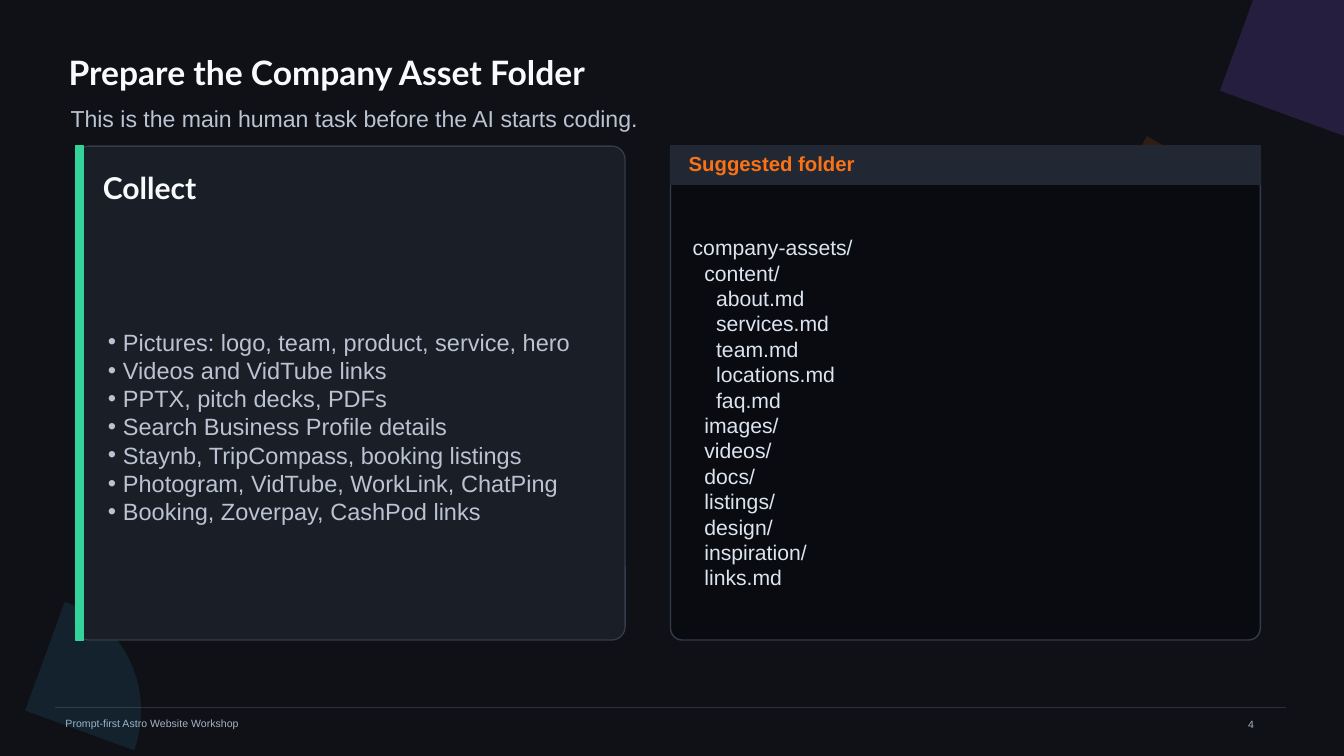
from lxml import etree
from pptx import Presentation
from pptx.dml.color import RGBColor
from pptx.enum.shapes import MSO_CONNECTOR, MSO_SHAPE
from pptx.enum.text import MSO_ANCHOR
from pptx.oxml.ns import qn
from pptx.util import Emu, Pt

ARC, RECT, ROUNDED = MSO_SHAPE.ARC, MSO_SHAPE.RECTANGLE, MSO_SHAPE.ROUNDED_RECTANGLE
STRAIGHT = MSO_CONNECTOR.STRAIGHT
TOP, MIDDLE = MSO_ANCHOR.TOP, MSO_ANCHOR.MIDDLE

WHITE, SOFT, MUTED = "F8FAFC", "BAC3D2", "AAB3C1"
ORANGE, GREEN, BORDER = "F97316", "34D399", "343B4A"

COLLECT = [
    "Pictures: logo, team, product, service, hero",
    "Videos and VidTube links",
    "PPTX, pitch decks, PDFs",
    "Search Business Profile details",
    "Staynb, TripCompass, booking listings",
    "Photogram, VidTube, WorkLink, ChatPing",
    "Booking, Zoverpay, CashPod links",
]
FOLDER_TREE = [
    "company-assets/",
    "  content/",
    "    about.md",
    "    services.md",
    "    team.md",
    "    locations.md",
    "    faq.md",
    "  images/",
    "  videos/",
    "  docs/",
    "  listings/",
    "  design/",
    "  inspiration/",
    "  links.md",
]


def px(n):
    """Turn px, 100 to the inch, into EMU."""
    return Emu(n * 9144)


def rgb(value):
    return RGBColor.from_string(value)


class Deck:
    """Holds the fonts and the slide being drawn."""

    heading, body = "Lato", "Arial"

    def __init__(self, width, height, background):
        self.prs = Presentation()
        self.prs.slide_width, self.prs.slide_height = px(width), px(height)
        self.slide = self.prs.slides.add_slide(self.prs.slide_layouts[6])
        fill = self.slide.background.fill
        fill.solid()
        fill.fore_color.rgb = rgb(background)

    def shape(self, kind, x, y, w, h, fill, line=None, weight=1):
        s = self.slide.shapes.add_shape(kind, px(x), px(y), px(w), px(h))
        s.shadow.inherit = False
        s.fill.solid()
        s.fill.fore_color.rgb = rgb(fill)
        if line:
            s.line.color.rgb = rgb(line)
            s.line.width = Pt(weight)
        else:
            s.line.fill.background()
        return s

    def wedge(self, x, y, size, rotation, fill, opacity):
        s = self.shape(ARC, x, y, size, size, fill)
        s.rotation = rotation
        color = s.fill._xPr.find(qn("a:solidFill"))[0]
        etree.SubElement(color, qn("a:alpha"), val=str(opacity * 1000))

    def panel(self, x, y, w, h, fill, radius, weight):
        s = self.shape(ROUNDED, x, y, w, h, fill, BORDER, weight)
        s.adjustments[0] = radius

    def rule(self, x1, x2, y, color, weight):
        s = self.slide.shapes.add_connector(STRAIGHT, px(x1), px(y), px(x2), px(y))
        s.line.color.rgb = rgb(color)
        s.line.width = Pt(weight)
        etree.SubElement(s._element.spPr, qn("a:effectLst"))

    def text(self, x, y, w, h, lines, size, color, font=body, bold=False,
             anchor=MIDDLE, inset=(0, 0), bullet_indent=0):
        s = self.slide.shapes.add_textbox(px(x), px(y), px(w), px(h))
        tf = s.text_frame
        tf.word_wrap = True
        tf.vertical_anchor = anchor
        tf.margin_left = tf.margin_right = px(inset[0])
        tf.margin_top = tf.margin_bottom = px(inset[1])
        for i, line in enumerate(lines):
            p = tf.paragraphs[0] if i == 0 else tf.add_paragraph()
            if bullet_indent:
                self.bullet(p, bullet_indent)
            r = p.add_run()
            r.text = line
            r.font.name = font
            r.font.size = Pt(size)
            r.font.bold = bold
            r.font.color.rgb = rgb(color)

    def bullet(self, p, indent):
        pPr = p._p.get_or_add_pPr()
        pPr.set("marL", str(px(indent)))
        pPr.set("indent", str(-px(indent)))
        etree.SubElement(pPr, qn("a:buFont"), typeface=self.body)
        etree.SubElement(pPr, qn("a:buChar"), char="•")


def main():
    deck = Deck(1333, 750, "0F1117")

    deck.rule(55, 1275, 702, "2B303B", 0.75)
    deck.text(65, 708, 550, 20, ["Prompt-first Astro Website Workshop"], 7.5, MUTED)
    deck.wedge(1020, -100, 380, 20, "8B5CF6", 18)
    deck.wedge(1120, 70, 260, 210, ORANGE, 14)
    deck.wedge(-90, 590, 230, 20, "38BDF8", 10)

    deck.text(68, 45, 1060, 52, ["Prepare the Company Asset Folder"], 24, WHITE,
              deck.heading, bold=True)
    deck.text(70, 104, 1060, 27,
              ["This is the main human task before the AI starts coding."], 16.5, SOFT)

    top, height = 145, 490
    deck.panel(75, top, 545, height, "1A1E27", 0.027, 0.9)
    deck.shape(RECT, 75, top, 8, height, GREEN, GREEN)
    deck.text(102, 172, 497, 28, ["Collect"], 21.5, WHITE, deck.heading, bold=True)
    deck.text(107, 227, 490, 392, COLLECT, 16.8, SOFT, bullet_indent=15)

    deck.panel(665, top, 585, height, "090B10", 0.024, 1)
    deck.shape(RECT, 665, top, 585, 38, "222734", "222734")
    deck.text(683, 156, 549, 13, ["Suggested folder"], 14.5, ORANGE, bold=True)
    deck.text(687, 200, 541, 418, FOLDER_TREE, 15.1, "DCE4F0")

    deck.text(1228, 707, 87, 33, ["4"], 7.5, MUTED, anchor=TOP, inset=(10, 5))
    deck.prs.save("out.pptx")


if __name__ == "__main__":
    main()
